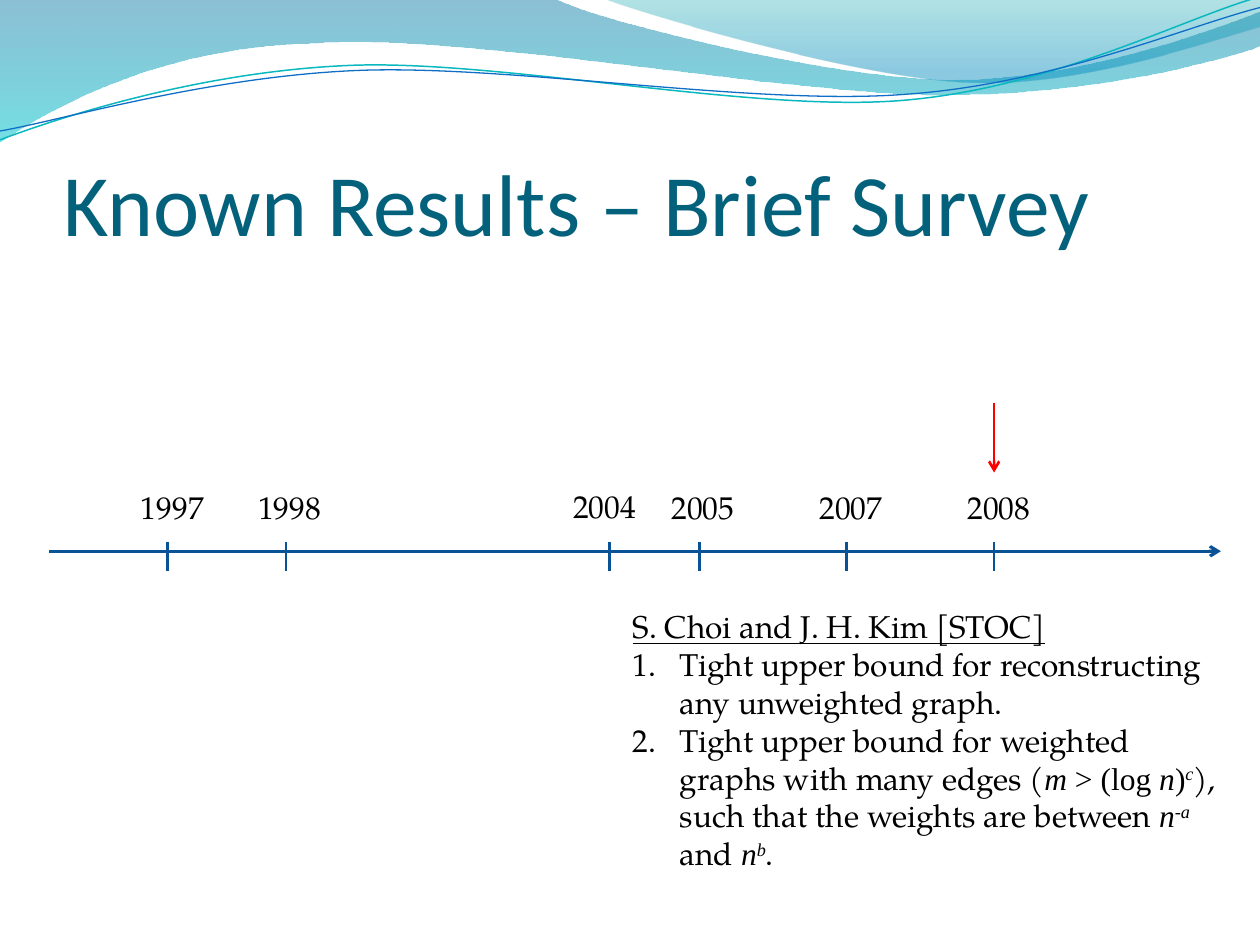
from lxml.etree import SubElement
from pptx import Presentation
from pptx.dml.color import RGBColor
from pptx.enum.shapes import MSO_CONNECTOR as Connector
from pptx.enum.text import MSO_ANCHOR as Anchor, MSO_AUTO_SIZE as AutoSize, PP_ALIGN as Align
from pptx.oxml.ns import qn
from pptx.util import Inches, Pt

COLORS = {"title": "04617B", "text": "000000", "axis": "095295", "marker": "FF0000",
          "teal": "0AB8BF", "blue": "0F6FC6"}
SERIF, MATH = "TeX Gyre Pagella", "Times New Roman"

presentation = Presentation()
presentation.slide_width, presentation.slide_height = Inches(10), Inches(7.5)
slide = presentation.slides.add_slide(presentation.slide_layouts[1])
column = presentation.slide_width // 100
row = presentation.slide_height // 75


def write(paragraph, text, color="text", baseline=None, **formats):
    run = paragraph.add_run()
    run.text = text
    run.font.color.rgb = RGBColor.from_string(COLORS[color])
    for name, value in {"size": Pt(18), "name": SERIF, **formats}.items():
        setattr(run.font, name, value)
    if baseline:
        run._r.get_or_add_rPr().set("baseline", baseline)


def draw_line(x1, y1, x2, y2, color, width, arrow=False):
    line = slide.shapes.add_connector(Connector.STRAIGHT, round(x1 * column), round(y1 * row),
                                      round(x2 * column), round(y2 * row))
    line.line.color.rgb = RGBColor.from_string(COLORS[color])
    line.line.width = Pt(width)
    if arrow:
        SubElement(line.line._get_or_add_ln(), qn("a:tailEnd"), type="arrow")
    SubElement(line._element.spPr, qn("a:effectLst"))


WAVES = [
    {"start": (0, 0), "gradient": [(0, "0074A1", 45), (1, "00C6CF", 55)],
     "pieces": [(44, -0.1), (47.6, 1.7, 66.4, 6.3, 75.8, 6.3), (85.3, 6.3, 95.8, 2.6, 100, 0.9),
                (100.1, 3.6), (98.3, 4.4, 87, 7.6, 74.6, 7.5), (62.2, 7.5, 38.2, 2.8, 25.7, 3.4),
                (12.9, 3.6, 4.6, 8.3, -0.1, 11.3), (0, 0)]},
    {"start": (47.9, -0.1), "gradient": [(0, "00A1A9", 30), (0.8, "008BBF", 45)],
     "pieces": [(50.9, 1.1, 68.2, 6.2, 76.9, 6.5), (85.6, 6.9, 96.1, 3.2, 100, 2.1),
                (100, 0), (47.9, -0.1)]},
    {"start": (0, 11.1), "line": ("teal", 0.85),
     "pieces": [(4.8, 9.3, 15.8, 5.7, 27.7, 5.2), (39.5, 4.7, 59.3, 8.9, 71.3, 8),
                (83.3, 7.1, 93.8, 1.5, 99.8, -0.2)]},
    {"start": (0, 10.4), "line": ("blue", 0.75),
     "pieces": [(4.7, 9.6, 16.4, 6.1, 28.3, 5.6), (40.3, 5.1, 59.7, 8.4, 71.7, 7.5),
                (83.6, 6.7, 94.1, 2.1, 100, 0.6)]},
]
for wave in WAVES:
    points = [(round(x * column), round(y * row)) for piece in [wave["start"], *wave["pieces"]]
              for x, y in zip(piece[::2], piece[1::2])]
    builder = slide.shapes.build_freeform(*points[0])
    builder.add_line_segments(points[1:], close="gradient" in wave)
    shape = builder.convert_to_shape()
    shape.shadow.inherit = False
    segments = iter(list(shape._element.spPr.iter(qn("a:lnTo"))))
    for piece in wave["pieces"]:
        group = [next(segments) for _ in piece[::2]]
        if len(group) == 3:
            group[0].addprevious(curve := group[0].makeelement(qn("a:cubicBezTo")))
            for segment in group:
                curve.append(segment[0])
                segment.getparent().remove(segment)
    if "gradient" in wave:
        shape.line.fill.background()
        shape.fill.gradient()
        shape.fill.gradient_angle = 270
        for stop, (position, color, opacity) in zip(shape.fill.gradient_stops, wave["gradient"]):
            stop.position = position
            stop.color.rgb = RGBColor.from_string(color)
        for element, (_, _, opacity) in zip(shape._element.spPr.iter(qn("a:srgbClr")), wave["gradient"]):
            SubElement(element, qn("a:alpha"), val=str(opacity * 1000))
    else:
        color, width = wave["line"]
        shape.fill.background()
        shape.line.color.rgb = RGBColor.from_string(COLORS[color])
        shape.line.width = Pt(width)

title, body = slide.shapes.title, slide.placeholders[1]
for placeholder, box, anchor, side in [(title, (5, 7.7, 90, 12.5), Anchor.BOTTOM, 0),
                                       (body, (49.2, 47.7, 48.4, 27.3), Anchor.TOP, 0.1)]:
    for name, value, unit in zip(("left", "top", "width", "height"), box, (column, row) * 2):
        setattr(placeholder, name, round(value * unit))
    for name, value in {"vertical_anchor": anchor, "auto_size": AutoSize.NONE, "word_wrap": True,
                        "margin_left": Inches(side), "margin_right": Inches(side),
                        "margin_top": Inches(0.05), "margin_bottom": Inches(side / 2)}.items():
        setattr(placeholder.text_frame, name, value)

heading = title.text_frame.paragraphs[0]
heading.alignment = Align.LEFT
write(heading, "Known Results – Brief Survey", "title", size=Pt(50), name="Calibri")

ITALIC = {"name": MATH, "italic": True}
RAISED = {**ITALIC, "baseline": "30000"}
RESULTS = [
    [("S. Choi and J. H. Kim [STOC]", {"underline": True})],
    [("Tight upper bound for reconstructing any unweighted graph.", {})],
    [("Tight upper bound for weighted graphs with many edges (", {}), ("m", ITALIC),
     (" > (log ", {"name": MATH}), ("n", ITALIC), (")", {"name": MATH}), ("c", RAISED),
     ("), such that the weights are between ", {}), ("n", ITALIC), ("-a", RAISED),
     (" and ", {}), ("n", ITALIC), ("b", RAISED), (".", {})],
]
for index, runs in enumerate(RESULTS):
    paragraph = body.text_frame.paragraphs[0] if index == 0 else body.text_frame.add_paragraph()
    paragraph.space_before = Pt(0)
    properties = paragraph._p.get_or_add_pPr()
    indent = Pt(27) if index else 0
    properties.set("marL", str(indent))
    properties.set("indent", str(-indent))
    if index:
        SubElement(properties, qn("a:buFont"), typeface=SERIF)
        SubElement(properties, qn("a:buAutoNum"), type="arabicPeriod")
    else:
        SubElement(properties, qn("a:buNone"))
    for text, formats in runs:
        write(paragraph, text, **formats)

draw_line(3.9, 43.75, 96.9, 43.75, "axis", 1.75, arrow=True)
YEARS = {"1997": (13.3, 10.2, 38.25, 7), "1998": (22.7, 19.5, 38.25, 7),
         "2004": (48.4, 44.5, 38.15, 7.8), "2005": (55.5, 52.3, 38.25, 7.8),
         "2007": (67.2, 64.05, 38.25, 7.8), "2008": (78.9, 75.8, 38.25, 7.8)}
for year, (tick, left, top, width) in YEARS.items():
    draw_line(tick, 43, tick, 45.3, "axis", 1.5)
    label = slide.shapes.add_textbox(round(left * column), round(top * row),
                                     round(width * column), 4 * row)
    label.text_frame.word_wrap = True
    write(label.text_frame.paragraphs[0], year)
draw_line(YEARS["2008"][0], 32, YEARS["2008"][0], 37.5, "marker", 1.5, arrow=True)

presentation.save("out.pptx")
